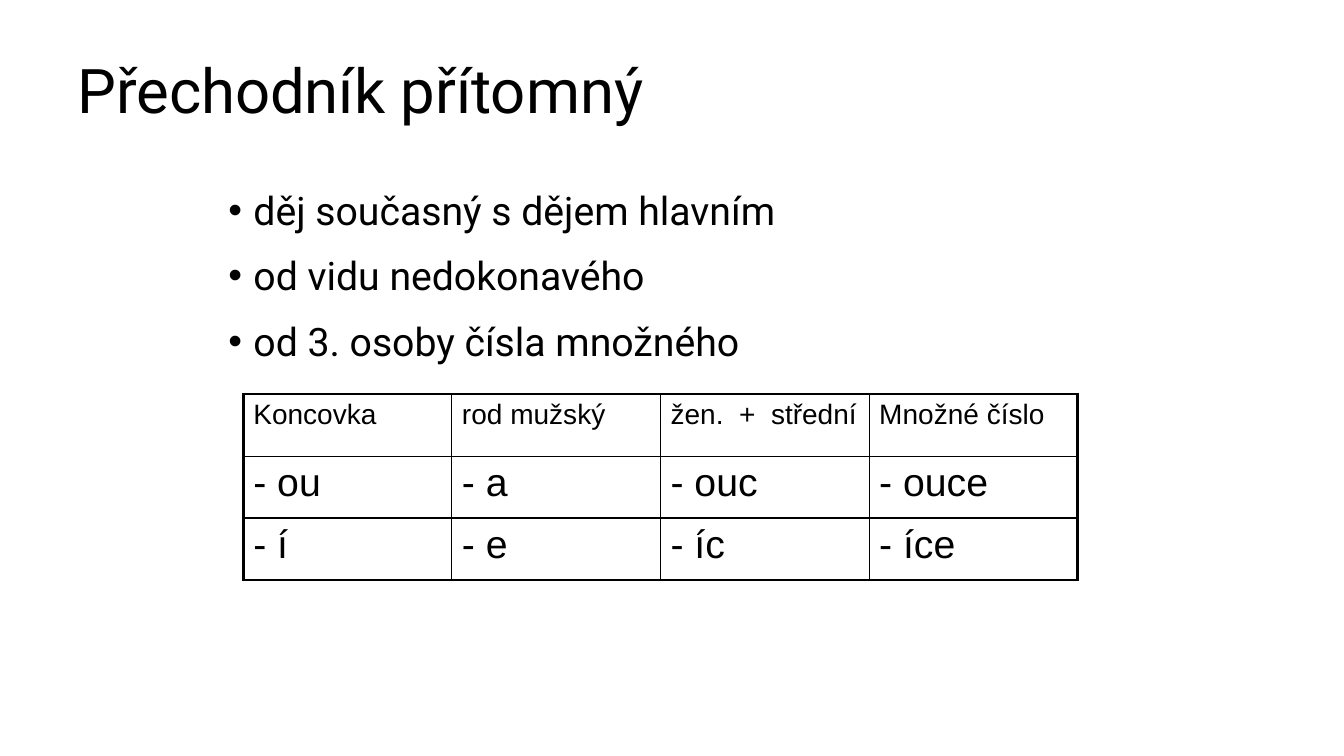
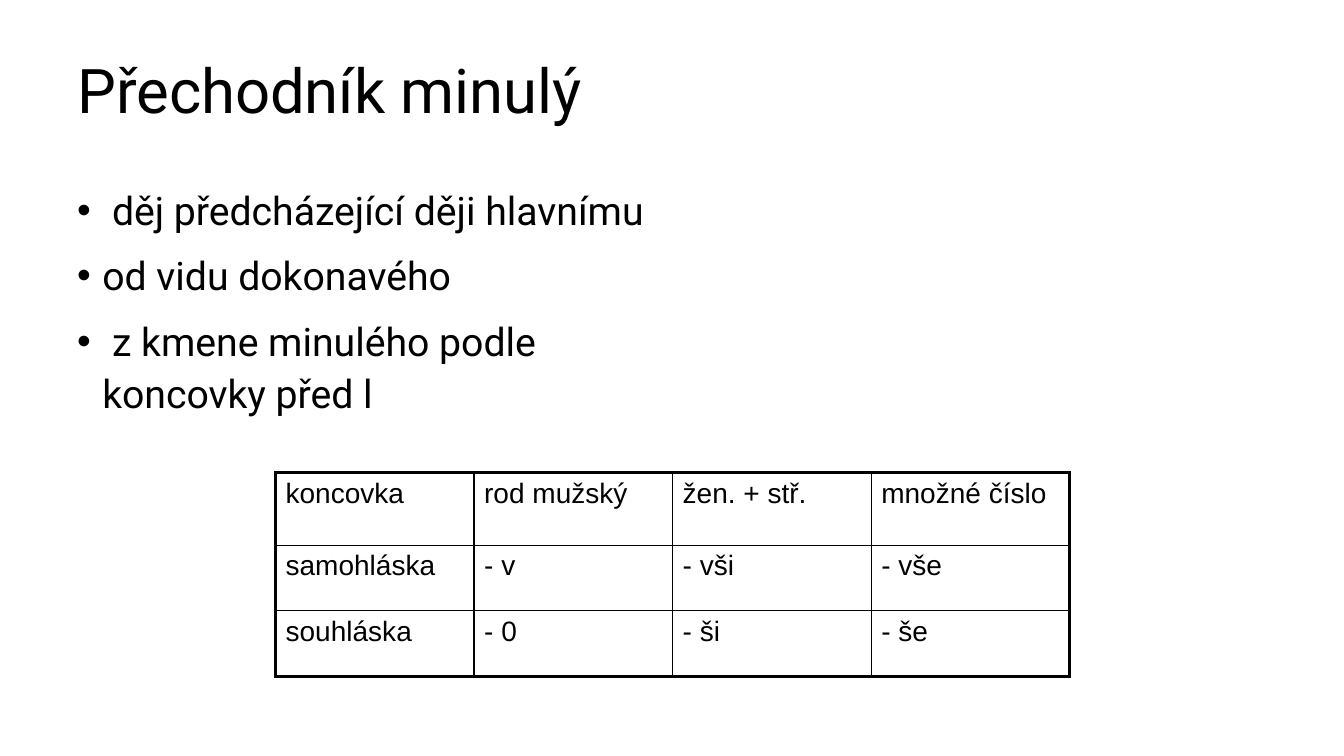
from lxml.etree import SubElement as Sub
from pptx import Presentation
from pptx.dml.color import RGBColor as RGB
from pptx.enum.text import MSO_ANCHOR as Anchor
from pptx.oxml.ns import qn
from pptx.util import Inches, Pt

WIDE, HIGH = Inches(13.33), Inches(7.5)
INK = "000000"
HEAD, CELL = "Roboto", "Arial"
THIN, THICK = 1, 2.25


def box(x, y, w, h):
    """Turn percentages of the slide into left, top, width and height."""
    return (int(WIDE * x / 100), int(HIGH * y / 100),
            int(WIDE * w / 100), int(HIGH * h / 100))


def paint(target, tone):
    """Give a font or a fill a solid colour."""
    target.rgb = RGB.from_string(tone)


def write(para, text, size, face):
    """Add one styled run to a paragraph."""
    run = para.add_run()
    run.text = text
    run.font.size = Pt(size)
    run.font.name = face
    paint(run.font.color, INK)


def title(slide, text):
    """Place and fill the title placeholder."""
    shape = slide.shapes.title
    shape.left, shape.top, shape.width, shape.height = box(5, 4, 90, 16.67)
    frame = shape.text_frame
    frame.word_wrap = True
    frame.vertical_anchor = Anchor.MIDDLE
    para = frame.paragraphs[0]
    para.alignment = 1
    para.line_spacing = 0.9
    write(para, text, 44, HEAD)


def bullets(slide, area, lines):
    """Add a text box with one bullet for each line."""
    frame = slide.shapes.add_textbox(*box(*area)).text_frame
    frame.word_wrap = True
    for i, line in enumerate(lines):
        para = frame.add_paragraph() if i else frame.paragraphs[0]
        para.line_spacing = 1.1
        para.space_before = Pt(10)
        props = para._p.get_or_add_pPr()
        props.set("marL", str(Inches(0.25)))
        props.set("indent", str(-Inches(0.25)))
        Sub(props, qn("a:buFont"), typeface="Arial")
        Sub(props, qn("a:buChar"), char="•")
        write(para, line, 28, HEAD)


def border(cell, side, width):
    """Draw one edge of a table cell."""
    props = cell._tc.get_or_add_tcPr()
    line = Sub(props, qn("a:ln" + side), w=str(Pt(width)))
    fill = Sub(line, qn("a:solidFill"))
    Sub(fill, qn("a:srgbClr"), val=INK)


def table(slide, area, tall, rows, sizes):
    """Add a ruled table whose outer edge is thick."""
    x, y, w = area
    deep, wide = len(rows), len(rows[0])
    frame = slide.shapes.add_table(deep, wide, *box(x, y, w, sum(tall)))
    grid = frame.table
    grid.first_row = grid.horz_banding = False
    for r, row in enumerate(rows):
        grid.rows[r].height = int(HIGH * tall[r] / 100)
        for c, text in enumerate(row):
            cell = grid.cell(r, c)
            outer = {"L": c == 0, "R": c == wide - 1,
                     "T": r == 0, "B": r == deep - 1}
            for side, edge in outer.items():
                border(cell, side, THICK if edge else THIN)
            cell.fill.background()
            write(cell.text_frame.paragraphs[0], text, sizes[r], CELL)


def page(deck, head, body, lines, area, tall, rows, sizes):
    """Build one slide from title, bullets and table."""
    slide = deck.slides.add_slide(deck.slide_layouts[5])
    title(slide, head)
    bullets(slide, body, lines)
    table(slide, area, tall, rows, sizes)


def main():
    """Build and save the deck."""
    deck = Presentation()
    deck.slide_width, deck.slide_height = WIDE, HIGH
    page(deck, "Přechodník přítomný", (16.25, 23.33, 58, 25.6),
         ["děj současný s dějem hlavním",
          "od vidu nedokonavého",
          "od 3. osoby čísla množného"],
         (18.1, 52.13, 62.1), (8.2, 8.2, 8.2),
         [["Koncovka", "rod mužský", "žen.  +  střední", "Množné číslo"],
          ["- ou", "- a", "- ouc", "- ouce"],
          ["- í", "- e", "- íc", "- íce"]], (20, 28, 28))
    page(deck, "Přechodník minulý", (5, 23.33, 44.2, 66),
         [" děj předcházející ději hlavnímu",
          "od vidu dokonavého",
          " z kmene minulého podle koncovky před l"],
         (20.5, 62.53, 59.1), (9.6, 8.67, 8.67),
         [["koncovka", "rod mužský", "žen. + stř.", "množné číslo"],
          ["samohláska", "- v", "- vši", "- vše"],
          ["souhláska", "- 0", "- ši", "- še"]], (20, 20, 20))
    deck.save("out.pptx")


if __name__ == "__main__":
    main()
